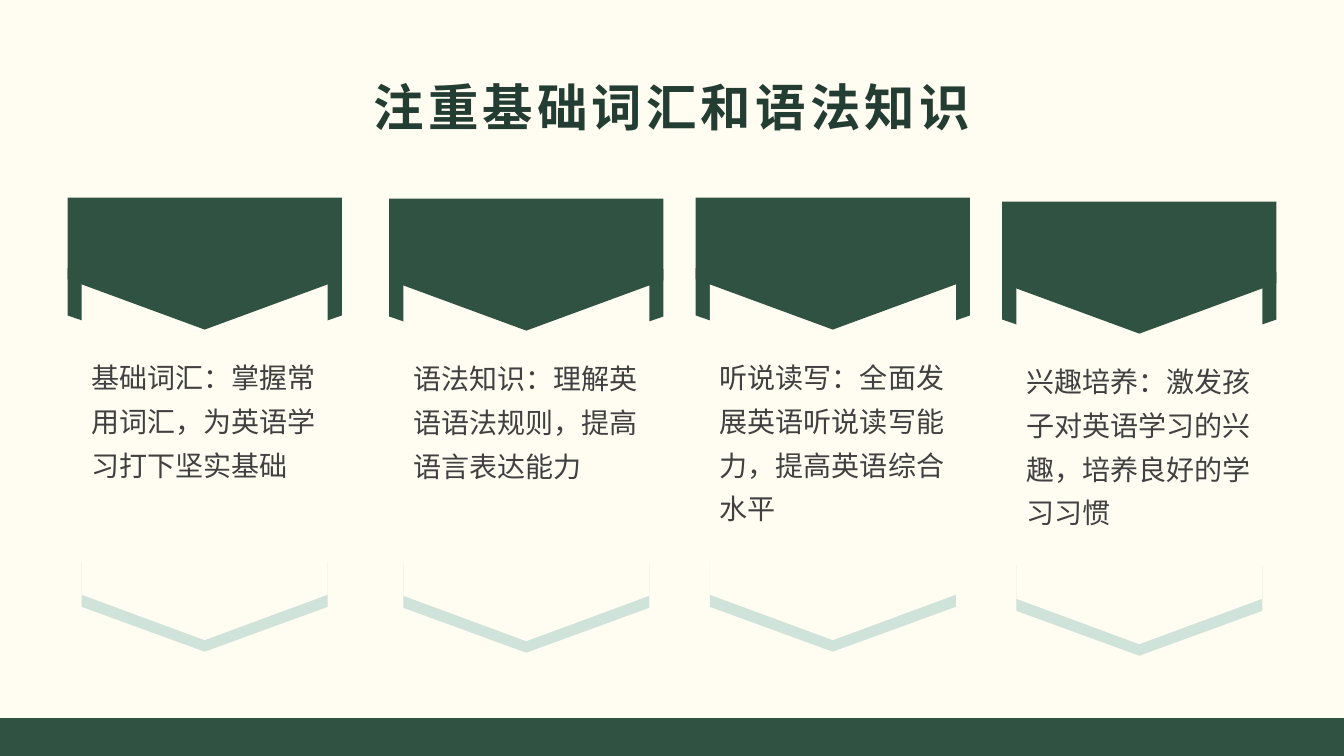
from lxml import etree
from pptx import Presentation
from pptx.dml.color import RGBColor
from pptx.enum.shapes import MSO_SHAPE
from pptx.enum.text import MSO_ANCHOR, PP_ALIGN
from pptx.oxml.ns import qn
from pptx.util import Inches, Pt

RECTANGLE, PENTAGON = MSO_SHAPE.RECTANGLE, MSO_SHAPE.PENTAGON
MIDDLE, CENTER, LEFT = MSO_ANCHOR.MIDDLE, PP_ALIGN.CENTER, PP_ALIGN.LEFT
GREEN = RGBColor(0x30, 0x52, 0x42)
MINT = RGBColor(0xCF, 0xE3, 0xDA)
CREAM = RGBColor(0xFF, 0xFC, 0xF2)
TITLE_INK = RGBColor(0x24, 0x3D, 0x32)
BODY_INK = RGBColor(0x40, 0x40, 0x40)
FONT = "Noto Sans CJK SC"
WIDTH, HEIGHT = 13.33, 7.5
MARGIN = 0.67
CARD_WIDTH, PANEL_WIDTH = 2.72, 2.44
INSET = (CARD_WIDTH - PANEL_WIDTH) / 2

CARDS = [
    (0.67, 1.96, "基础词汇：掌握常用词汇，为英语学习打下坚实基础"),
    (3.86, 1.97, "语法知识：理解英语语法规则，提高语言表达能力"),
    (6.9, 1.96, "听说读写：全面发展英语听说读写能力，提高英语综合水平"),
    (9.94, 2.0, "兴趣培养：激发孩子对英语学习的兴趣，培养良好的学习习惯"),
]


def paint(shape, color):
    shape.fill.solid()
    shape.fill.fore_color.rgb = color
    shape.line.fill.background()
    shape.shadow.inherit = False


def write(frame, text, align, size, bold, color):
    para = frame.paragraphs[0]
    para.alignment = align
    span = para.add_run()
    span.text = text
    for name, value in {"name": FONT, "size": Pt(size), "bold": bold}.items():
        setattr(span.font, name, value)
    span.font.color.rgb = color
    etree.SubElement(span.font._element, qn("a:ea"), typeface=FONT)
    return para, span


deck = Presentation()
deck.slide_width, deck.slide_height = Inches(WIDTH), Inches(HEIGHT)
page = deck.slides.add_slide(deck.slide_layouts[5])
page.background.fill.solid()
page.background.fill.fore_color.rgb = CREAM

footer = page.shapes.add_shape(
    RECTANGLE, 0, Inches(HEIGHT * 0.95), Inches(WIDTH), Inches(HEIGHT * 0.05))
paint(footer, GREEN)

title = page.shapes.title
title.left, title.top = Inches(MARGIN), Inches(MARGIN)
title.width, title.height = Inches(WIDTH - 2 * MARGIN), Inches(0.77)
title.text_frame.vertical_anchor = MIDDLE
para, span = write(title.text_frame, "注重基础词汇和语法知识", CENTER, 36, True, TITLE_INK)
span.font._element.set("spc", "300")

for left, top, text in CARDS:
    middle = left + CARD_WIDTH / 2
    for center, depth, width, color in [
        (1.17, 0.94, CARD_WIDTH, GREEN),
        (4.06, 0.89, PANEL_WIDTH, MINT),
    ]:
        fold = page.shapes.add_shape(
            PENTAGON, Inches(middle - depth / 2), Inches(top + center - width / 2),
            Inches(depth), Inches(width))
        fold.rotation = 270
        fold._element.spPr.xfrm.set("flipH", "1")
        paint(fold, color)

    for start, side, tip, width, color in [
        (0.7, 3.24, 3.69, PANEL_WIDTH, CREAM),
        (0, 0.81, 1.31, CARD_WIDTH, GREEN),
    ]:
        west, east, north = middle - width / 2, middle + width / 2, top + start
        outline = page.shapes.build_freeform(Inches(west), Inches(north))
        corners = [(east, north), (east, north + side),
                   (middle, north + tip), (west, north + side)]
        outline.add_line_segments([(Inches(x), Inches(y)) for x, y in corners])
        paint(outline.convert_to_shape(), color)

    box = page.shapes.add_textbox(
        Inches(left + INSET), Inches(top + 1.47), Inches(PANEL_WIDTH), Inches(2.2))
    box.text_frame.word_wrap = True
    para, span = write(box.text_frame, text, LEFT, 20, False, BODY_INK)
    para.line_spacing = 1.3

deck.save("out.pptx")
